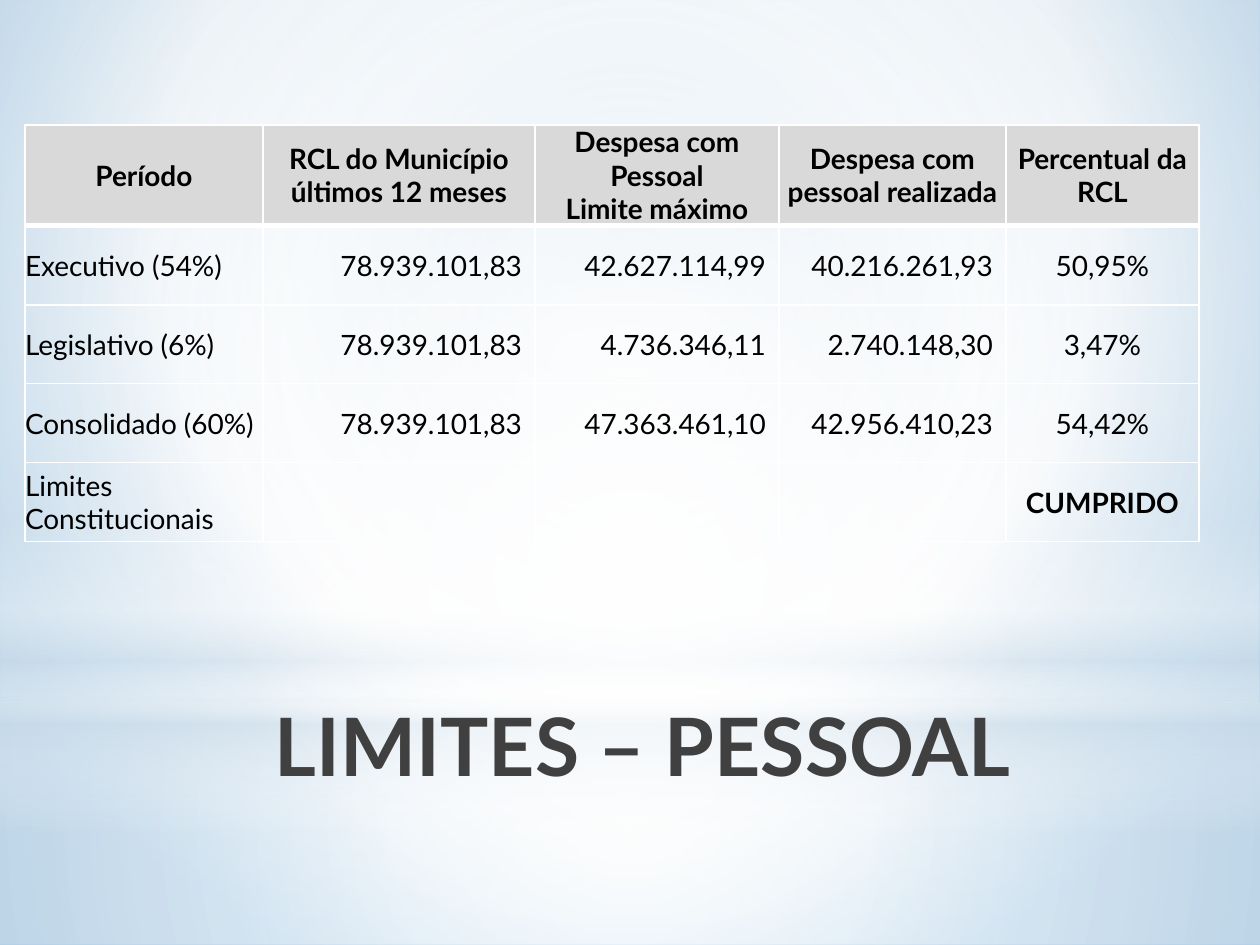
from lxml import etree
from pptx import Presentation
from pptx.dml.color import RGBColor
from pptx.enum.shapes import MSO_SHAPE
from pptx.enum.text import MSO_ANCHOR, PP_ALIGN
from pptx.oxml.ns import qn
from pptx.util import Emu, Pt

RECT, OVAL = MSO_SHAPE.RECTANGLE, MSO_SHAPE.OVAL
MID, TOP = MSO_ANCHOR.MIDDLE, MSO_ANCHOR.TOP
LEFT, CENTER, RIGHT = PP_ALIGN.LEFT, PP_ALIGN.CENTER, PP_ALIGN.RIGHT
SCALE = 914400 / 126
FONT = "Lato"
HUE = {"white": "FFFFFF", "mist": "CCDDEA", "pale": "BCD5E8", "blue": "82B6DE",
       "gray": "D9D9D9", "dark": "404040", "black": "000000"}


def px(n):
    return Emu(round(n * SCALE))


def blend(fill, box, stops, rect):
    fill.solid()
    old = box.find(qn("a:solidFill"))
    grad = etree.Element(qn("a:gradFill"), rotWithShape="1")
    marks = etree.SubElement(grad, qn("a:gsLst"))
    for pos, hue, alpha in stops:
        stop = etree.SubElement(marks, qn("a:gs"), pos=str(pos * 1000))
        tone = etree.SubElement(stop, qn("a:srgbClr"), val=HUE[hue])
        if alpha < 100:
            etree.SubElement(tone, qn("a:alpha"), val=str(alpha * 1000))
    if rect:
        ring = etree.SubElement(grad, qn("a:path"), path="circle")
        sides = {s: str(n * 1000) for s, n in zip("ltrb", rect)}
        etree.SubElement(ring, qn("a:fillToRect"), **sides)
    else:
        etree.SubElement(grad, qn("a:lin"), ang="5400000", scaled="0")
    box.replace(old, grad)


prs = Presentation()
prs.slide_width, prs.slide_height = px(1260), px(945)
slide = prs.slides.add_slide(prs.slide_layouts[6])

back = slide.background.fill
back.solid()
base = slide.element.find(".//" + qn("p:bgPr"))
blend(back, base, [(0, "pale", 100), (60, "white", 100), (100, "blue", 100)],
      (20, 10, 20, 60))

mid = (50, 50, 50, 50)
layers = [
    (RECT, 703, 242, [(0, "white", 91), (37, "white", 76), (100, "mist", 79)], mid),
    (RECT, 0, 703, [(0, "white", 89), (48, "white", 62), (100, "mist", 79)], mid),
    (RECT, 519, 315, [(0, "white", 0), (29, "white", 30), (45, "mist", 40),
                      (55, "white", 26), (65, "mist", 60), (100, "white", 0)], None),
    (OVAL, 220, 703, [(0, "white", 100), (56, "white", 0)], mid),
]
for kind, top, high, stops, rect in layers:
    shape = slide.shapes.add_shape(kind, 0, px(top), px(1260), px(high))
    shape.shadow.inherit = False
    shape.line.fill.background()
    blend(shape.fill, shape.element.spPr, stops, rect)

title = slide.shapes.add_textbox(px(194), px(690), px(897), px(158)).text_frame
title.word_wrap = True
title.vertical_anchor = TOP
para = title.paragraphs[0]
para.alignment = CENTER
run = para.add_run()
run.text = "LIMITES – PESSOAL"
run.font.name, run.font.size, run.font.bold = FONT, Pt(46), True
run.font.color.rgb = RGBColor.from_string(HUE["dark"])

rows = [
    ["Período", "RCL do Município\núltimos 12 meses",
     "Despesa com Pessoal\nLimite máximo", "Despesa com pessoal realizada",
     "Percentual da RCL"],
    ["Executivo (54%)", "78.939.101,83", "42.627.114,99", "40.216.261,93", "50,95%"],
    ["Legislativo (6%)", "78.939.101,83", "4.736.346,11", "2.740.148,30", "3,47%"],
    ["Consolidado (60%)", "78.939.101,83", "47.363.461,10", "42.956.410,23", "54,42%"],
    ["Limites Constitucionais", "", "", "", "CUMPRIDO"],
]
wide = [238, 272, 244, 227, 193]
tall = [100, 79, 79, 79, 79]
table = slide.shapes.add_table(len(rows), len(wide), px(25), px(125),
                               px(sum(wide)), px(sum(tall))).table
table.first_row = table.horz_banding = False
for col, size in zip(table.columns, wide):
    col.width = px(size)
for row, size in zip(table.rows, tall):
    row.height = px(size)

for r, row in enumerate(rows):
    for c, text in enumerate(row):
        cell = table.cell(r, c)
        head = r == 0
        sum_cell = not head and 0 < c < 4
        cell.vertical_anchor = MID
        cell.margin_left = cell.margin_top = cell.margin_bottom = 0
        cell.margin_right = px(13 if sum_cell else 0)
        if head:
            cell.fill.solid()
            cell.fill.fore_color.rgb = RGBColor.from_string(HUE["gray"])
        else:
            cell.fill.background()
        props = cell._tc.get_or_add_tcPr()
        for i, side in enumerate("LRTB"):
            thick = (r, side) in [(0, "B"), (1, "T")]
            edge = etree.Element(qn("a:ln" + side), w=str(Pt(3 if thick else 1)))
            ink = etree.SubElement(edge, qn("a:solidFill"))
            etree.SubElement(ink, qn("a:srgbClr"), val=HUE["white"])
            props.insert(i, edge)
        if not text:
            continue
        frame = cell.text_frame
        for i, line in enumerate(text.split("\n")):
            para = frame.add_paragraph() if i else frame.paragraphs[0]
            para.alignment = RIGHT if sum_cell else CENTER if head or c else LEFT
            run = para.add_run()
            run.text = line
            run.font.name, run.font.size = FONT, Pt(16)
            run.font.bold = head or text == "CUMPRIDO"
            run.font.color.rgb = RGBColor.from_string(HUE["black"])

prs.save("out.pptx")
